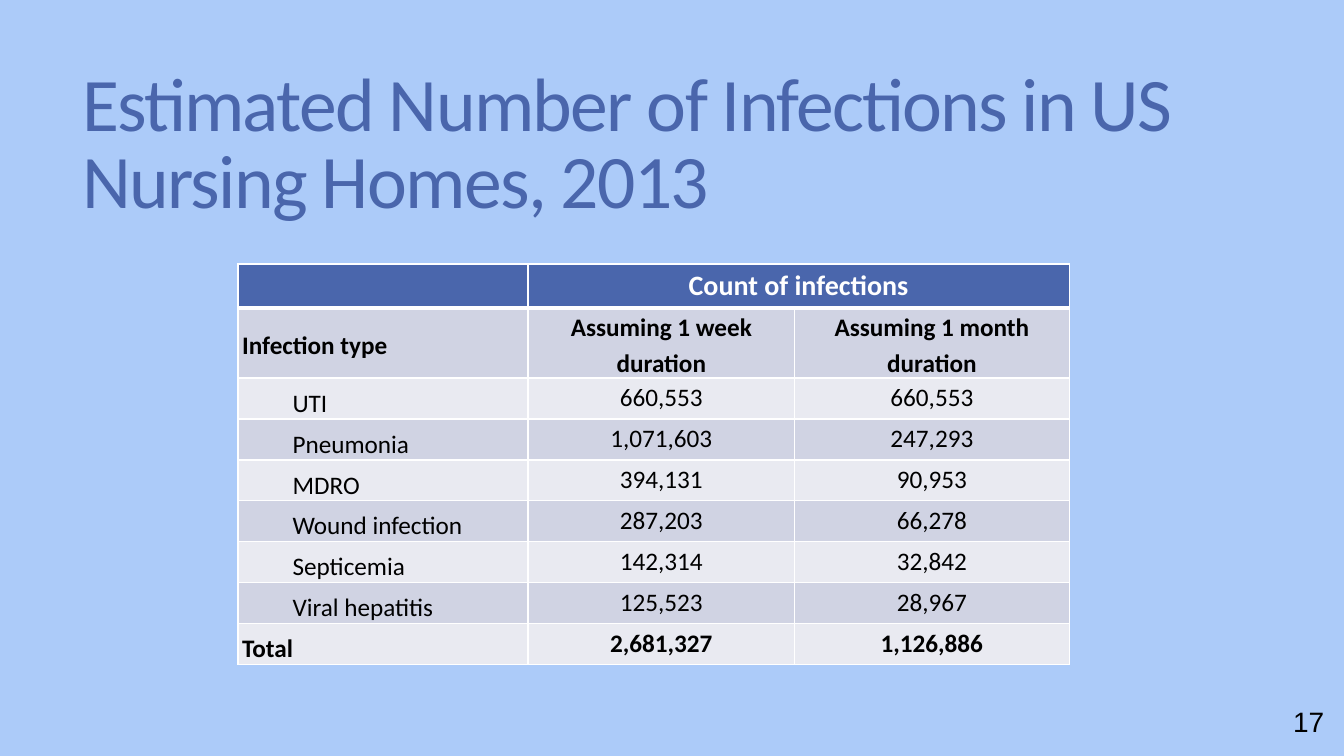
from dataclasses import dataclass

from lxml import etree
from pptx import Presentation
from pptx.dml.color import RGBColor
from pptx.enum.text import MSO_ANCHOR, PP_ALIGN
from pptx.oxml.ns import qn
from pptx.util import Pt

TOP, MIDDLE, BOTTOM = MSO_ANCHOR.TOP, MSO_ANCHOR.MIDDLE, MSO_ANCHOR.BOTTOM
LEFT, CENTER = PP_ALIGN.LEFT, PP_ALIGN.CENTER

SKY, BLUE, WHITE, BLACK = "ACCBF9", "4A66AC", "FFFFFF", "000000"
BANDS = ("D0D3E3", "E9EAF1")
COLUMN_WIDTHS = (207.2, 190.5, 196)
HEADER_HEIGHT, SUBHEADER_HEIGHT, ROW_HEIGHT = 31.5, 50, 29.25
TYPE_INDENT = 36

ROWS = (
    ("Infection type", "Assuming 1 week duration", "Assuming 1 month duration"),
    ("UTI", "660,553", "660,553"),
    ("Pneumonia", "1,071,603", "247,293"),
    ("MDRO", "394,131", "90,953"),
    ("Wound infection", "287,203", "66,278"),
    ("Septicemia", "142,314", "32,842"),
    ("Viral hepatitis", "125,523", "28,967"),
    ("Total", "2,681,327", "1,126,886"),
)


@dataclass(frozen=True)
class TextStyle:
    size: float
    color: str = BLACK
    font: str = "Calibri"
    bold: bool = False
    align: PP_ALIGN = LEFT
    line_spacing: float = 1.0
    tracking: float = 0
    indent: float = 0


@dataclass(frozen=True)
class TextBox:
    text: str
    left: float
    top: float
    width: float
    height: float
    style: TextStyle
    anchor: MSO_ANCHOR = TOP
    wrap: bool = True


TEXT_BOXES = (
    TextBox("Estimated Number of Infections in US Nursing Homes, 2013",
            51.8, 39.6, 848.2, 130.3,
            TextStyle(54, BLUE, line_spacing=0.85, tracking=-1.2), MIDDLE),
    TextBox("17", 916.6, 499.7, 36.7, 31.7, TextStyle(20, font="Arial"), wrap=False),
)


def rgb(color: str) -> RGBColor:
    return RGBColor.from_string(color)


def write(frame, text: str, style: TextStyle) -> None:
    para = frame.paragraphs[0]
    para.alignment = style.align
    para.line_spacing = style.line_spacing
    if style.indent:
        properties = para._p.get_or_add_pPr()
        properties.set("marL", str(Pt(style.indent)))
        properties.set("indent", "0")
    span = para.add_run()
    span.text = text
    span.font.name = style.font
    span.font.size = Pt(style.size)
    span.font.bold = style.bold
    span.font.color.rgb = rgb(style.color)
    if style.tracking:
        span._r.get_or_add_rPr().set("spc", str(round(style.tracking * 100)))


def add_text_box(page, item: TextBox) -> None:
    box = page.shapes.add_textbox(Pt(item.left), Pt(item.top), Pt(item.width), Pt(item.height))
    box.text_frame.word_wrap = item.wrap
    box.text_frame.vertical_anchor = item.anchor
    write(box.text_frame, item.text, item.style)


def paint_cell(cell, fill: str, bottom_width: float = 1, top_width: float = 1) -> None:
    """Draw the white borders, then the fill that must follow them in the XML."""
    properties = cell._tc.get_or_add_tcPr()
    widths = {"a:lnL": 1, "a:lnR": 1, "a:lnT": top_width, "a:lnB": bottom_width}
    for tag, width in widths.items():
        line = etree.SubElement(properties, qn(tag), w=str(Pt(width)))
        solid = etree.SubElement(line, qn("a:solidFill"))
        etree.SubElement(solid, qn("a:srgbClr"), val=WHITE)
    cell.fill.solid()
    cell.fill.fore_color.rgb = rgb(fill)


def fill_body_cell(cell, text: str, row: int, column: int) -> None:
    is_heading, is_total = row == 0, row == len(ROWS) - 1
    is_label = column == 0
    strong = is_heading or is_total
    paint_cell(cell, BANDS[row % 2], top_width=3 if is_heading else 1)
    cell.margin_left = cell.margin_right = Pt(3)
    cell.margin_top = cell.margin_bottom = Pt(0)
    if is_heading:
        cell.vertical_anchor = MIDDLE
    else:
        cell.vertical_anchor = BOTTOM if is_label else TOP
    write(cell.text_frame, text, TextStyle(
        18, bold=strong, align=LEFT if is_label else CENTER, line_spacing=1.15,
        indent=TYPE_INDENT if is_label and not strong else 0))


def add_infection_table(page) -> None:
    heights = (HEADER_HEIGHT, SUBHEADER_HEIGHT) + (ROW_HEIGHT,) * (len(ROWS) - 1)
    table = page.shapes.add_table(
        len(heights), len(COLUMN_WIDTHS), Pt(170), Pt(188.6),
        Pt(sum(COLUMN_WIDTHS)), Pt(sum(heights))).table
    for column, width in zip(table.columns, COLUMN_WIDTHS):
        column.width = Pt(width)
    for row, height in zip(table.rows, heights):
        row.height = Pt(height)

    for cell in table.rows[0].cells:
        paint_cell(cell, BLUE, bottom_width=3)
    table.cell(0, 1).merge(table.cell(0, 2))
    write(table.cell(0, 1).text_frame, "Count of infections",
          TextStyle(20, WHITE, bold=True, align=CENTER))

    for row, texts in enumerate(ROWS):
        for column, text in enumerate(texts):
            fill_body_cell(table.cell(row + 1, column), text, row, column)


def main() -> None:
    deck = Presentation()
    deck.slide_width, deck.slide_height = Pt(960), Pt(540)
    page = deck.slides.add_slide(deck.slide_layouts[6])
    page.background.fill.solid()
    page.background.fill.fore_color.rgb = rgb(SKY)
    title, page_number = TEXT_BOXES
    add_text_box(page, title)
    add_infection_table(page)
    add_text_box(page, page_number)
    deck.save("out.pptx")


if __name__ == "__main__":
    main()
